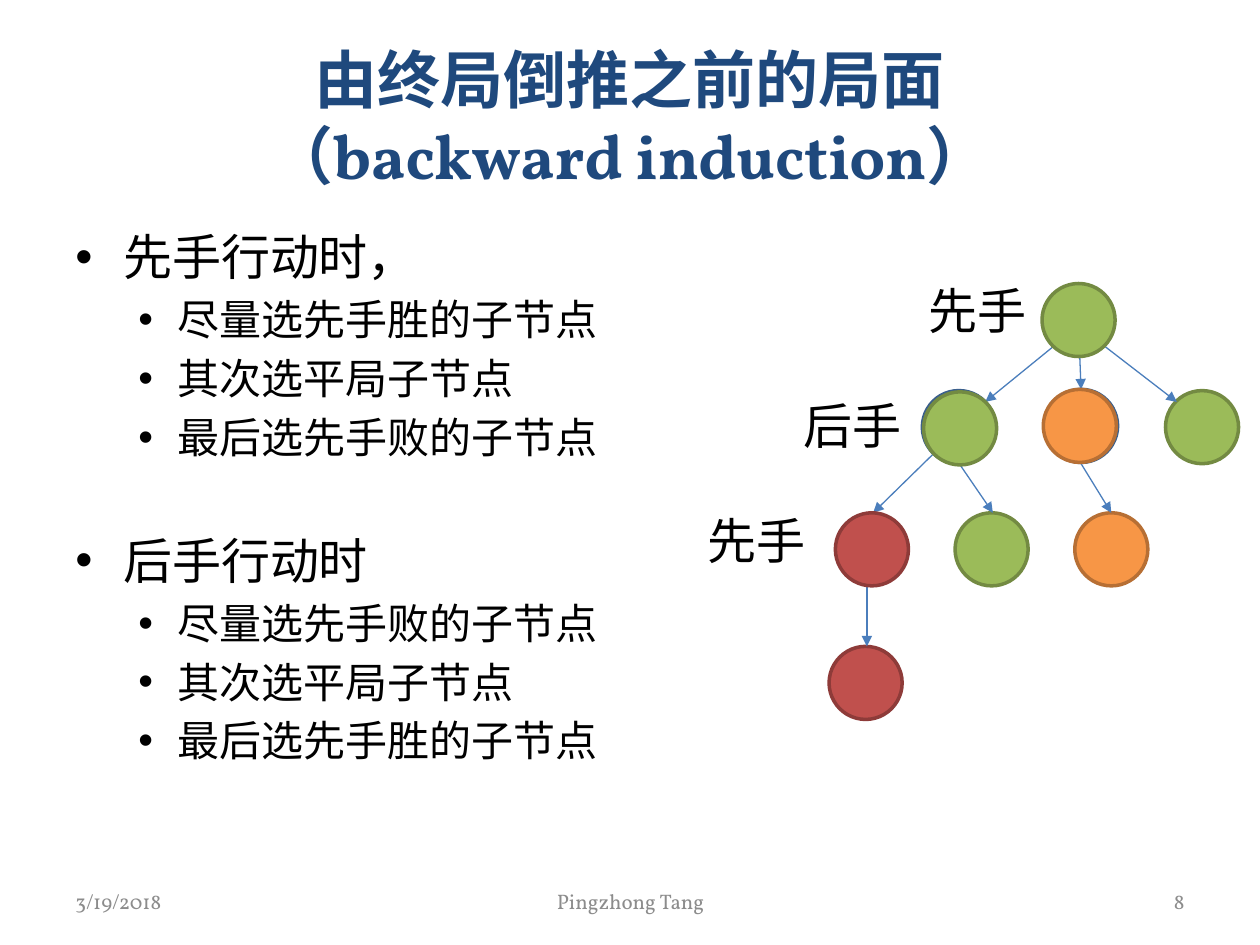
from lxml import etree
from pptx import Presentation
from pptx.dml.color import RGBColor
from pptx.enum.lang import MSO_LANGUAGE_ID
from pptx.enum.shapes import MSO_CONNECTOR, MSO_SHAPE
from pptx.enum.text import MSO_ANCHOR, PP_ALIGN
from pptx.oxml.ns import qn
from pptx.util import Pt

PX = 9144  # 100 px to the inch
FONT = "Vollkorn"
CHINESE = MSO_LANGUAGE_ID.SIMPLIFIED_CHINESE
OVAL, STRAIGHT = MSO_SHAPE.OVAL, MSO_CONNECTOR.STRAIGHT
TOP, MIDDLE = MSO_ANCHOR.TOP, MSO_ANCHOR.MIDDLE
LEFT, CENTER, RIGHT = PP_ALIGN.LEFT, PP_ALIGN.CENTER, PP_ALIGN.RIGHT

BLACK, NAVY, GREY, EDGE = "000000", "1F497D", "8C8C8C", "4B7EBC"
# Fill and outline of the node kinds
BLUE = ("4F81BD", "3A5F8C")
GREEN = ("9BBB59", "738A42")
RED = ("C0504D", "8E3B39")
ORANGE = ("F79646", "B76F34")
NODE_SIZE = 58

STRATEGIES = [
    ("先手行动时，", ["尽量选先手胜的子节点", "其次选平局子节点", "最后选先手败的子节点"]),
    ("后手行动时", ["尽量选先手败的子节点", "其次选平局子节点", "最后选先手胜的子节点"]),
]
BACK_NODES = [
    (732, 310, BLUE), (829, 309, BLUE), (925, 310, GREEN),
    (758, 407, GREEN), (853, 407, ORANGE), (658, 513, RED),
]
FRONT_NODES = [
    (663, 407, RED), (733, 311, GREEN), (827, 225, GREEN), (828, 309, ORANGE),
]
MOVES = [
    (836, 275, 782, 319), (857, 283, 858, 309), (877, 275, 934, 319),
    (741, 360, 693, 407), (762, 369, 788, 407),
    (858, 368, 882, 407), (688, 466, 688, 513),
]
PLAYER_LABELS = [
    (726, 218, 99, "先手", False), (583, 309, 187, "后手", True), (551, 400, 99, "先手", False),
]
FOOTERS = [
    (50, 233, "3/19/2018", LEFT), (342, 317, "Pingzhong Tang", CENTER), (717, 233, "8", RIGHT),
]


def rgb(value):
    return RGBColor.from_string(value)


def format_runs(paragraph, size, color, bold=False):
    for run in paragraph.runs:
        font = run.font
        font.name, font.size, font.bold = FONT, Pt(size), bold
        font.color.rgb = rgb(color)
        font.language_id = CHINESE
        # The same face for Chinese characters
        east_asian = etree.Element(qn("a:ea"), typeface=FONT)
        font._element.find(qn("a:latin")).addnext(east_asian)


def add_frame(slide, left, top, width, height, anchor=TOP, wrap=True):
    box = slide.shapes.add_textbox(left * PX, top * PX, width * PX, height * PX)
    frame = box.text_frame
    frame.word_wrap, frame.vertical_anchor = wrap, anchor
    return frame


def add_label(slide, left, top, width, height, text, size, color,
              align=CENTER, anchor=TOP, wrap=True, bold=False):
    frame = add_frame(slide, left, top, width, height, anchor, wrap)
    paragraph = frame.paragraphs[0]
    paragraph.text, paragraph.alignment = text, align
    format_runs(paragraph, size, color, bold)


def add_bullet(paragraph, text, size, margin, hanging, space_before):
    paragraph.text = text
    paragraph.space_before = Pt(space_before)
    format_runs(paragraph, size, BLACK)
    properties = paragraph._p.get_or_add_pPr()
    properties.set("marL", str(margin * PX))
    properties.set("indent", str(-hanging * PX))
    etree.SubElement(properties, qn("a:buFont"), typeface="Arial")
    etree.SubElement(properties, qn("a:buChar"), char="•")


def add_strategies(slide):
    frame = add_frame(slide, 50, 175, 900, 495)
    paragraph = frame.paragraphs[0]
    for number, (turn, choices) in enumerate(STRATEGIES):
        if number:
            paragraph = frame.add_paragraph()
        add_bullet(paragraph, turn, 28, 38, 38, 39 if number else 5.6)
        for choice in choices:
            add_bullet(frame.add_paragraph(), choice, 24, 81, 31, 4.8)


def add_node(slide, left, top, colors):
    node = slide.shapes.add_shape(OVAL, left * PX, top * PX, NODE_SIZE * PX, NODE_SIZE * PX)
    fill, outline = colors
    node.shadow.inherit = False
    node.fill.solid()
    node.fill.fore_color.rgb = rgb(fill)
    node.line.color.rgb = rgb(outline)
    node.line.width = Pt(2)


def add_move(slide, *ends):
    move = slide.shapes.add_connector(STRAIGHT, *(end * PX for end in ends))
    move.line.color.rgb = rgb(EDGE)
    move.line.width = Pt(0.75)
    etree.SubElement(move.line._get_or_add_ln(), qn("a:tailEnd"), type="triangle")
    etree.SubElement(move._element.spPr, qn("a:effectLst"))


def main():
    presentation = Presentation()
    presentation.slide_width, presentation.slide_height = 1000 * PX, 750 * PX
    slide = presentation.slides.add_slide(presentation.slide_layouts[6])

    # Strategies and title
    add_strategies(slide)
    add_label(slide, 50, 30, 900, 125, "由终局倒推之前的局面\v（backward induction）",
              36, NAVY, anchor=MIDDLE, bold=True)

    # Footer
    for left, width, text, align in FOOTERS:
        add_label(slide, left, 695, width, 40, text, 12, GREY, align, MIDDLE)

    # Game tree
    for node in BACK_NODES:
        add_node(slide, *node)
    for move in MOVES:
        add_move(slide, *move)
    for node in FRONT_NODES:
        add_node(slide, *node)
    for left, top, width, player, wrap in PLAYER_LABELS:
        add_label(slide, left, top, width, 57, player, 28, BLACK, wrap=wrap)

    presentation.save("out.pptx")


if __name__ == "__main__":
    main()
